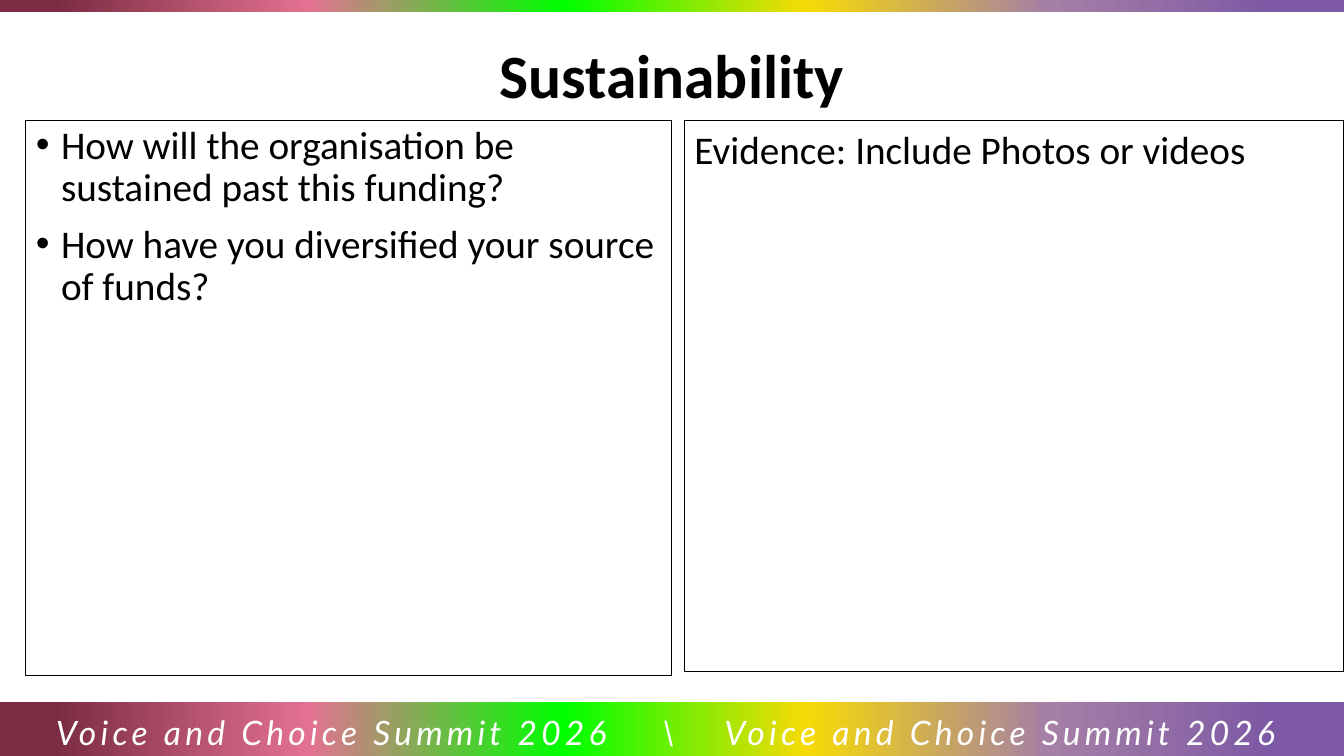
from dataclasses import dataclass

from lxml import etree
from pptx import Presentation
from pptx.dml.color import RGBColor
from pptx.enum import shapes, text
from pptx.oxml import ns
from pptx.util import Pt

BLACK = RGBColor(0x00, 0x00, 0x00)
WHITE = RGBColor(0xFF, 0xFF, 0xFF)
PURPLE = RGBColor(0x7D, 0x59, 0xA5)
MAUVE = RGBColor(0xA5, 0x7F, 0xA6)
YELLOW = RGBColor(0xF7, 0xDA, 0x06)
GREEN = RGBColor(0x00, 0xFF, 0x00)
PINK = RGBColor(0xE3, 0x71, 0x91)
MAROON = RGBColor(0x7B, 0x2C, 0x42)
RAINBOW = [(5, PURPLE), (22, MAUVE), (40, YELLOW), (58, GREEN), (77, PINK), (96, MAROON)]

PAGE_WIDTH = 960
SUMMIT = "Voice and Choice Summit 2026"
QUESTIONS = [
    "How will the organisation be sustained past this funding?",
    "How have you diversified your source of funds?",
]


@dataclass(frozen=True)
class Area:
    """A rectangle on the page, in points."""
    left: float
    top: float
    width: float
    height: float

    def lengths(self) -> list:
        return [Pt(value) for value in (self.left, self.top, self.width, self.height)]


BARS = [Area(0, 0, PAGE_WIDTH, 8.5), Area(0, 501.3, PAGE_WIDTH, 41)]
TITLE = Area(0, 19.5, PAGE_WIDTH, 66)
QUESTION_PANEL = Area(18.4, 86, 461.6, 396.5)
EVIDENCE_PANEL = Area(489, 86, 470.5, 393.7)
FOOTER = Area(0, 503.3, PAGE_WIDTH, 35)


def place(shape, area: Area) -> None:
    shape.left, shape.top, shape.width, shape.height = area.lengths()


def add_rainbow_bar(page, area: Area) -> None:
    bar = page.shapes.add_shape(shapes.MSO_SHAPE.RECTANGLE, *area.lengths())
    bar.shadow.inherit = False
    bar.line.fill.background()
    bar.fill.gradient()
    bar.fill.gradient_angle = 180
    stops = bar.element.spPr.find(f".//{ns.qn('a:gsLst')}")
    for stop in list(stops):
        stops.remove(stop)
    for percent, color in RAINBOW:
        stop = etree.SubElement(stops, ns.qn("a:gs"), pos=str(percent * 1000))
        etree.SubElement(stop, ns.qn("a:srgbClr"), val=str(color))


def prepare_frame(box, anchor=text.MSO_ANCHOR.TOP):
    frame = box.text_frame
    frame.word_wrap = True
    frame.auto_size = text.MSO_AUTO_SIZE.NONE
    frame.vertical_anchor = anchor
    return frame


def outline(box) -> None:
    box.line.color.rgb = BLACK
    box.line.width = Pt(0.75)


def write(para, words: str, *, size: float = 28, font: str = "Calibri", color: RGBColor = BLACK,
          bold: bool = False, italic: bool = False, spacing: float = 0,
          align=text.PP_ALIGN.LEFT, before: float = 0, line_spacing: float = 1.0) -> None:
    para.alignment = align
    para.space_before = Pt(before)
    para.line_spacing = line_spacing
    span = para.add_run()
    span.text = words
    span.font.size = Pt(size)
    span.font.name = font
    span.font.color.rgb = color
    span.font.bold = bold
    span.font.italic = italic
    if spacing:
        span.font._element.set("spc", str(round(spacing * 100)))


def add_bullet(para) -> None:
    properties = para._p.get_or_add_pPr()
    properties.set("marL", str(Pt(18)))
    properties.set("indent", str(Pt(-18)))
    etree.SubElement(properties, ns.qn("a:buFont"), typeface="Arial")
    etree.SubElement(properties, ns.qn("a:buChar"), char="•")


def add_tab_stops(para, *positions: float) -> None:
    stops = etree.SubElement(para._p.get_or_add_pPr(), ns.qn("a:tabLst"))
    for position in positions:
        etree.SubElement(stops, ns.qn("a:tab"), pos=str(Pt(position)), algn="l")


def add_footer(page) -> None:
    box = page.shapes.add_textbox(*FOOTER.lengths())
    frame = prepare_frame(box)
    frame.margin_left = Pt(40)
    frame.margin_right = 0
    para = frame.paragraphs[0]
    add_tab_stops(para, 432.5, 477.5)
    write(para, f"{SUMMIT}\t\\\t{SUMMIT}", size=24, font="Lato", color=WHITE,
          italic=True, spacing=3, line_spacing=1.07)


def add_evidence(page) -> None:
    box = page.shapes.add_textbox(*EVIDENCE_PANEL.lengths())
    outline(box)
    write(prepare_frame(box).paragraphs[0], "Evidence: Include Photos or videos")


def fill_title(box) -> None:
    place(box, TITLE)
    frame = prepare_frame(box, text.MSO_ANCHOR.MIDDLE)
    write(frame.paragraphs[0], "Sustainability", size=44, bold=True,
          align=text.PP_ALIGN.CENTER)


def fill_questions(box) -> None:
    place(box, QUESTION_PANEL)
    outline(box)
    frame = prepare_frame(box)
    for index, question in enumerate(QUESTIONS):
        para = frame.add_paragraph() if index else frame.paragraphs[0]
        add_bullet(para)
        write(para, question, before=10 if index else 0, line_spacing=0.9)


def main() -> None:
    deck = Presentation()
    deck.slide_width, deck.slide_height = Pt(PAGE_WIDTH), Pt(540)
    page = deck.slides.add_slide(deck.slide_layouts[1])
    for area in BARS:
        add_rainbow_bar(page, area)
    fill_title(page.shapes.title)
    add_evidence(page)
    add_footer(page)
    fill_questions(page.placeholders[1])
    deck.save("out.pptx")


if __name__ == "__main__":
    main()
